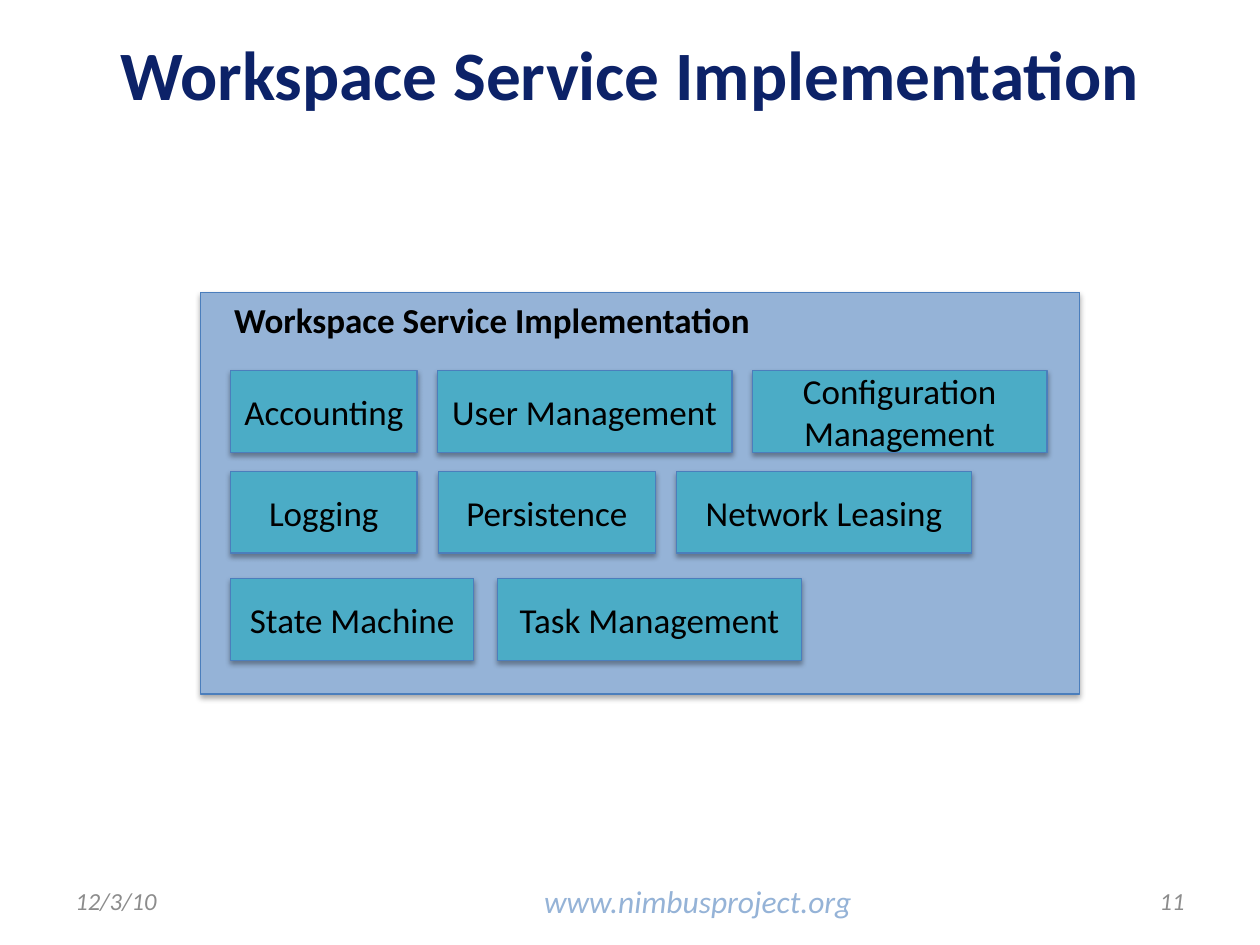
from lxml import etree
from pptx import Presentation
from pptx.dml.color import RGBColor
from pptx.enum.shapes import MSO_SHAPE
from pptx.enum.text import MSO_ANCHOR, PP_ALIGN
from pptx.oxml.ns import qn
from pptx.util import Inches, Pt

RECTANGLE = MSO_SHAPE.RECTANGLE
TOP, MIDDLE = MSO_ANCHOR.TOP, MSO_ANCHOR.MIDDLE
LEFT, CENTER, RIGHT = PP_ALIGN.LEFT, PP_ALIGN.CENTER, PP_ALIGN.RIGHT

WIDTH, HEIGHT = Inches(10), Inches(7.5)
FONT = "Calibri"
NAVY, BLACK, GRAY = "0C2268", "000000", "8C8C8C"
PANEL_BLUE, TEAL, OUTLINE = "95B3D7", "4BACC6", "4B7EBC"
MODULE_LEFT, MODULE_HEIGHT = 18.3, 8.67
FOOTER_TOP, FOOTER_HEIGHT = 92.67, 5.33

MODULE_ROWS = [
    (39.2, 1.6, [("Accounting", 14.8), ("User Management", 23.4),
                 ("Configuration Management", 23.4)]),
    (49.87, 1.7, [("Logging", 14.8), ("Persistence", 17.2),
                  ("Network Leasing", 23.4)]),
    (61.2, 1.9, [("State Machine", 19.3), ("Task Management", 24.1)]),
]


def color(hex_code):
    """Turn a hex string into a colour."""
    return RGBColor.from_string(hex_code)


def area(left, top, width, height):
    """Turn percentages of the slide's width and height into lengths."""
    return [round(share * side / 100) for share, side in
            zip((left, top, width, height), (WIDTH, HEIGHT, WIDTH, HEIGHT))]


def write(shape, text, size, hex_code, align=LEFT, anchor=MIDDLE,
          bold=False, italic=False, wrap=True):
    """Put one formatted paragraph into a shape."""
    frame = shape.text_frame
    frame.text = text
    frame.word_wrap = wrap
    frame.vertical_anchor = anchor
    para = frame.paragraphs[0]
    para.alignment = align
    font = para.runs[0].font
    font.name, font.size = FONT, Pt(size)
    font.bold, font.italic = bold, italic
    font.color.rgb = color(hex_code)


def add_label(page, place, text, size, hex_code, **style):
    """Add a text box."""
    write(page.shapes.add_textbox(*area(*place)), text, size, hex_code, **style)


def add_shadow(shape):
    """Give a shape a soft shadow straight below it."""
    shape.shadow.inherit = False
    effects = shape._element.spPr.find(qn("a:effectLst"))
    shadow = etree.SubElement(effects, qn("a:outerShdw"), blurRad=str(Pt(3.1)),
                              dist=str(Pt(1.8)), dir="5400000", rotWithShape="0")
    tint = etree.SubElement(shadow, qn("a:srgbClr"), val=BLACK)
    etree.SubElement(tint, qn("a:alpha"), val="35000")


def add_block(page, place, fill):
    """Add an outlined rectangle with a shadow."""
    block = page.shapes.add_shape(RECTANGLE, *area(*place))
    block.fill.solid()
    block.fill.fore_color.rgb = color(fill)
    block.line.color.rgb = color(OUTLINE)
    block.line.width = Pt(0.75)
    add_shadow(block)
    return block


def add_modules(page):
    """Lay out the service modules row by row."""
    for top, gap, modules in MODULE_ROWS:
        left = MODULE_LEFT
        for name, width in modules:
            block = add_block(page, (left, top, width, MODULE_HEIGHT), TEAL)
            write(block, name, 20, BLACK, align=CENTER)
            left += width + gap


def add_footer(page):
    """Add the date, web address and page number."""
    add_label(page, (42.2, FOOTER_TOP, 27.3, FOOTER_HEIGHT),
              "www.nimbusproject.org", 18, PANEL_BLUE, anchor=TOP,
              italic=True, wrap=False)
    for left, text, align in ((5, "12/3/10", LEFT), (71.7, "11", RIGHT)):
        add_label(page, (left, FOOTER_TOP, 23.3, FOOTER_HEIGHT), text, 14,
                  GRAY, align=align, italic=True)


def main():
    """Build and save the slide."""
    deck = Presentation()
    deck.slide_width, deck.slide_height = WIDTH, HEIGHT
    page = deck.slides.add_slide(deck.slide_layouts[6])
    title = "Workspace Service Implementation"
    add_block(page, (15.9, 30.93, 69.8, 42.53), PANEL_BLUE)
    add_label(page, (5, -0.67, 90, 16.67), title, 39.6, NAVY,
              align=CENTER, bold=True)
    add_label(page, (17.6, 30.93, 43.3, 5.87), title, 20, BLACK,
              anchor=TOP, bold=True, wrap=False)
    add_modules(page)
    add_footer(page)
    deck.save("out.pptx")


if __name__ == "__main__":
    main()
